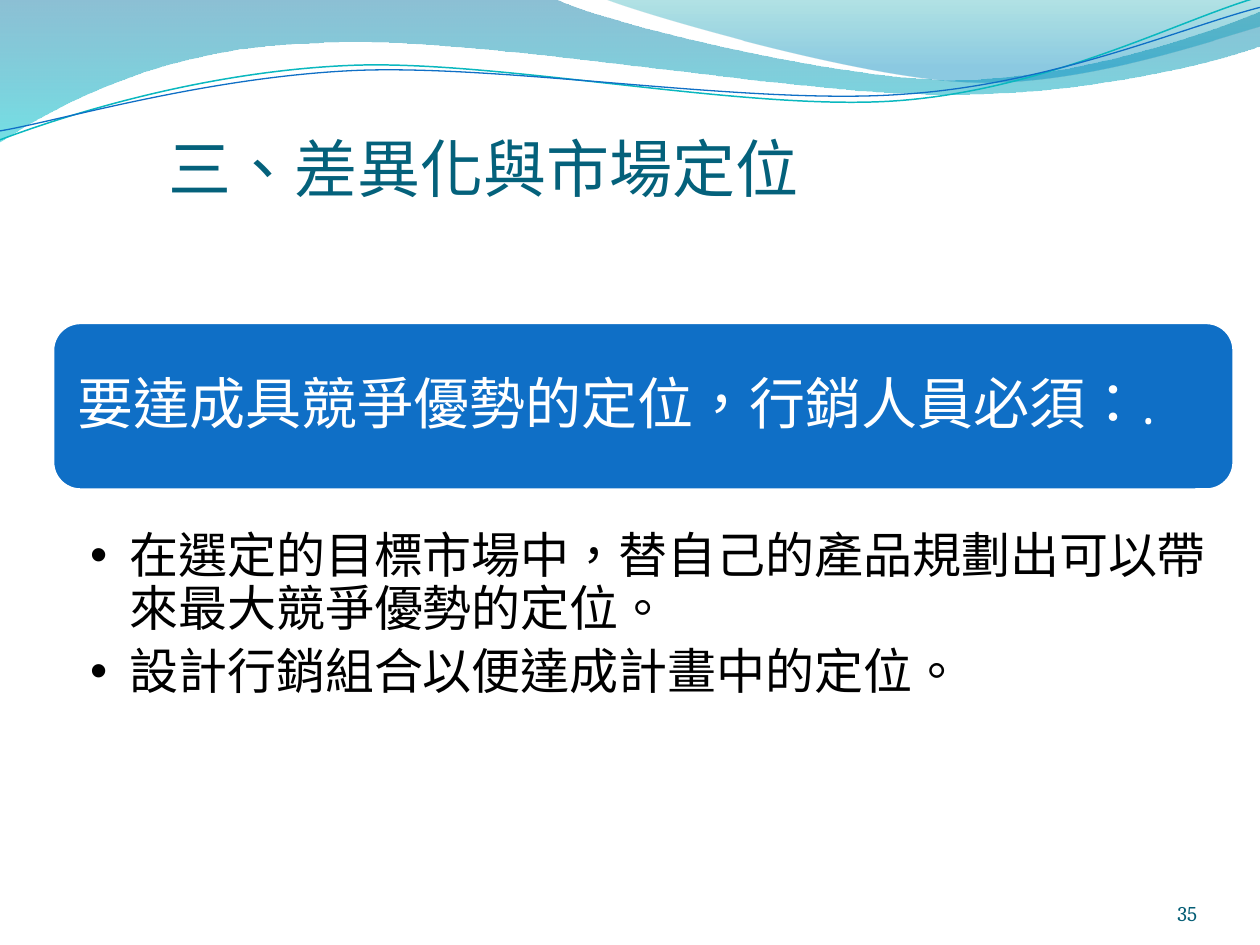
from pptx import Presentation
from pptx.dml.color import RGBColor
from pptx.enum.shapes import MSO_SHAPE
from pptx.enum.text import MSO_ANCHOR, PP_ALIGN
from pptx.oxml.ns import qn
from pptx.util import Cm, Pt
from lxml.etree import SubElement

COLORS = {
    "deep": "0074A1", "aqua": "00C6CF", "teal": "00A1A9", "sky": "008BBF",
    "teal line": "0AB8BF", "blue": "0F6FC6", "title": "04617B",
    "number": "045D75", "white": "FFFFFF", "black": "000000",
}
TITLE = "三、差異化與市場定位"
BANNER = "要達成具競爭優勢的定位，行銷人員必須：."
BULLETS = [
    "在選定的目標市場中，替自己的產品規劃出可以帶來最大競爭優勢的定位。",
    "設計行銷組合以便達成計畫中的定位。",
]
PAGE_NUMBER = "35"

BANDS = [
    {"segments": [(0, 0), (11.18, -0.03),
                  (12.09, 0.43, 16.87, 1.6, 19.25, 1.6),
                  (21.67, 1.6, 24.33, 0.66, 25.4, 0.23),
                  (25.43, 0.91),
                  (24.97, 1.12, 22.1, 1.93, 18.95, 1.9),
                  (15.8, 1.9, 9.7, 0.71, 6.53, 0.86),
                  (3.28, 0.91, 1.17, 2.11, -0.03, 2.87),
                  (0, 0)],
     "stops": [(0, "deep", 45), (1, "aqua", 55)]},
    {"segments": [(12.17, -0.03),
                  (12.93, 0.28, 17.32, 1.57, 19.53, 1.65),
                  (21.74, 1.75, 24.41, 0.81, 25.4, 0.53),
                  (25.4, 0), (12.17, -0.03)],
     "stops": [(0, "teal", 30), (0.8, "sky", 45)]},
]
WAVES = [
    {"segments": [(0, 2.82),
                  (1.22, 2.36, 4.01, 1.45, 7.04, 1.32),
                  (10.03, 1.19, 15.06, 2.26, 18.11, 2.03),
                  (21.16, 1.8, 23.83, 0.38, 25.35, -0.05)],
     "color": "teal line", "width": 0.85},
    {"segments": [(0, 2.64),
                  (1.19, 2.44, 4.17, 1.55, 7.19, 1.42),
                  (10.24, 1.3, 15.16, 2.13, 18.21, 1.9),
                  (21.23, 1.7, 23.9, 0.53, 25.4, 0.15)],
     "color": "blue", "width": 0.75},
]
UNITS_PER_CM = 100


def color(name):
    return RGBColor.from_string(COLORS[name])


def bend(line, controls):
    line.tag = qn("a:cubicBezTo")
    for child in list(line):
        line.remove(child)
    for x, y in controls:
        point = SubElement(line, qn("a:pt"))
        point.set("x", str(round(x)))
        point.set("y", str(round(y)))


def add_outline(page, segments, closed):
    scaled = [[value * UNITS_PER_CM for value in segment] for segment in segments]
    anchors = [segment[-2:] for segment in scaled]
    left, top = (min(axis) for axis in zip(*anchors))
    builder = page.shapes.build_freeform(*anchors[0], scale=Cm(1 / UNITS_PER_CM))
    builder.add_line_segments(anchors[1:], close=closed)
    shape = builder.convert_to_shape()
    shape.shadow.inherit = False
    lines = list(shape._element.spPr.iter(qn("a:lnTo")))
    for line, segment in zip(lines, scaled[1:]):
        if len(segment) == 6:
            bend(line, [(x - left, y - top) for x, y in zip(segment[::2], segment[1::2])])
    return shape


def add_band(page, segments, stops):
    shape = add_outline(page, segments, True)
    shape.line.fill.background()
    shape.fill.gradient()
    shape.fill.gradient_angle = 270
    for stop, (position, name, _) in zip(shape.fill.gradient_stops, stops):
        stop.position = position
        stop.color.rgb = color(name)
    tints = shape._element.spPr.iter(qn("a:srgbClr"))
    for tint, (_, _, opacity) in zip(tints, stops):
        SubElement(tint, qn("a:alpha")).set("val", str(opacity * 1000))


def add_wave(page, segments, name, width):
    shape = add_outline(page, segments, False)
    shape.fill.background()
    shape.line.color.rgb = color(name)
    shape.line.width = Pt(width)


def add_text(page, place, lines, size, font, name, anchor=MSO_ANCHOR.TOP,
             insets=(0, 0, 0, 0), align=PP_ALIGN.LEFT, spacing=1.0):
    box = page.shapes.add_textbox(*map(Cm, place))
    frame = box.text_frame
    frame.word_wrap = True
    frame.vertical_anchor = anchor
    frame.margin_left, frame.margin_top, frame.margin_right, frame.margin_bottom = map(Cm, insets)
    frame.text = "\n".join(lines)
    for paragraph in frame.paragraphs:
        paragraph.alignment = align
        paragraph.line_spacing = spacing
        for span in paragraph.runs:
            span.font.size = Pt(size)
            span.font.name = font
            span.font.color.rgb = color(name)
            properties = span._r.get_or_add_rPr()
            properties.set("lang", "zh-TW")
            properties.set("altLang", "en-US")
    return frame


def add_bullets(frame, indent, gap):
    for paragraph in frame.paragraphs:
        paragraph.space_after = Pt(gap)
        properties = paragraph._p.get_or_add_pPr()
        properties.set("lvl", "1")
        properties.set("marL", str(Cm(indent)))
        properties.set("indent", str(-Cm(indent)))
        SubElement(properties, qn("a:buFont")).set("typeface", "Arial")
        SubElement(properties, qn("a:buChar")).set("char", "•")


def main():
    deck = Presentation()
    deck.slide_width, deck.slide_height = Cm(25.4), Cm(19.05)
    page = deck.slides.add_slide(deck.slide_layouts[6])

    for band in BANDS:
        add_band(page, band["segments"], band["stops"])
    for wave in WAVES:
        add_wave(page, wave["segments"], wave["color"], wave["width"])

    add_text(page, (3.39, 1.72, 21.39, 3.18), [TITLE], 36, "Calibri", "title",
             MSO_ANCHOR.MIDDLE, (0, 0.13, 0, 0))
    add_text(page, (22.02, 17.65, 2.11, 1.02), [PAGE_NUMBER], 12, "Cambria", "number",
             MSO_ANCHOR.BOTTOM, align=PP_ALIGN.RIGHT)

    banner = page.shapes.add_shape(MSO_SHAPE.ROUNDED_RECTANGLE,
                                   Cm(1.06), Cm(6.5), Cm(23.82), Cm(3.38))
    banner.shadow.inherit = False
    banner.fill.solid()
    banner.fill.fore_color.rgb = color("blue")
    banner.line.color.rgb = color("white")
    banner.line.width = Pt(2)
    add_text(page, (1.23, 6.66, 23.5, 3.05), [BANNER], 32, "Cambria", "white",
             MSO_ANCHOR.MIDDLE, (0.33, 0.33, 0.33, 0.33), spacing=0.9)

    body = add_text(page, (1.06, 10.61, 23.82, 3.94), BULLETS, 28, "Cambria", "black",
                    insets=(0.76, 0.1, 0.56, 0.1), spacing=0.9)
    add_bullets(body, 0.79, 5.6)

    deck.save("out.pptx")


if __name__ == "__main__":
    main()
